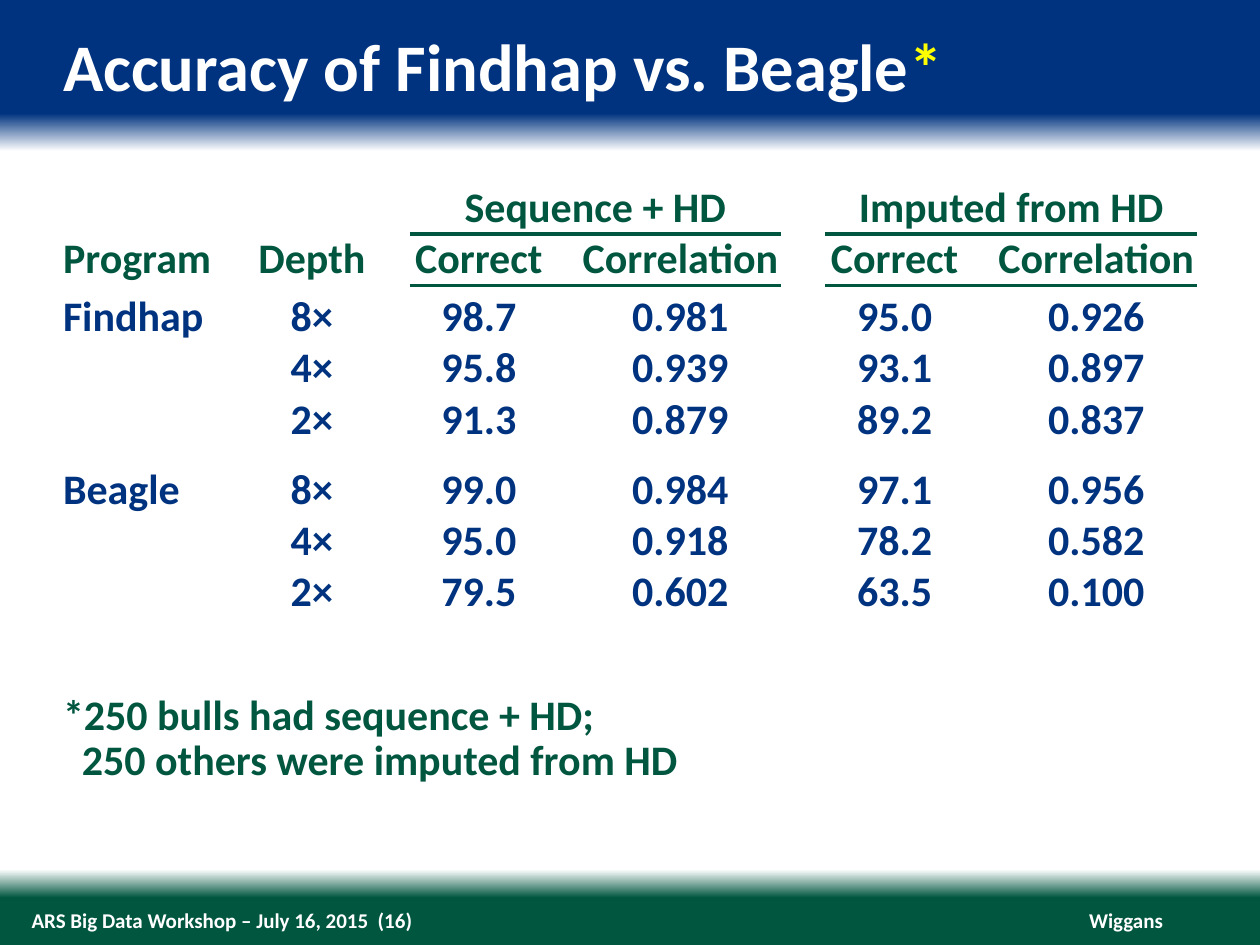
"""Build the slide comparing the accuracy of Findhap and Beagle."""
from lxml.etree import SubElement
from pptx import Presentation
from pptx.dml.color import RGBColor
from pptx.enum.text import MSO_ANCHOR, MSO_AUTO_SIZE, PP_ALIGN
from pptx.oxml import parse_xml
from pptx.oxml.ns import nsdecls, qn
from pptx.util import Pt

COLORS = {"blue": "00337F", "green": "00563F", "white": "FFFFFF", "yellow": "FFFF00"}
BACKGROUND_STOPS = [(0, "blue"), (12, "blue"), (16, "white"),
                    (92, "white"), (95, "green"), (100, "green")]

TITLE = [("Accuracy of Findhap vs. Beagle", "white"), ("*", "yellow")]
FOOTNOTE = ["*250 bulls had sequence + HD;", "250 others were imputed from HD"]
FOOTERS = [
    ("ARS Big Data Workshop – July 16, 2015  (16)", (18, 518.4, 375.84, 14.4), PP_ALIGN.LEFT, True),
    ("Wiggans", (622.08, 518.4, 42.48, 14.4), PP_ALIGN.RIGHT, False),
]
GROUPS = {"Sequence + HD": 2, "Imputed from HD": 6}
HEADINGS = ["Program", "Depth", "Correct", "Correlation", "Correct", "Correlation"]
RESULTS = [
    ["Findhap", "8×", "98.7", "0.981", "95.0", "0.926"],
    ["", "4×", "95.8", "0.939", "93.1", "0.897"],
    ["", "2×", "91.3", "0.879", "89.2", "0.837"],
    ["Beagle", "8×", "99.0", "0.984", "97.1", "0.956"],
    ["", "4×", "95.0", "0.918", "78.2", "0.582"],
    ["", "2×", "79.5", "0.602", "63.5", "0.100"],
]
TEXT_COLUMNS = [0, 1, 2, 4, 6, 8]
COLUMN_WIDTHS = [86.4, 111.6, 79.2, 18, 115.2, 25.2, 79.2, 18, 115.2]
ROW_HEIGHT = 29.3
PROGRAM_GAPS = {2: 3.6, 5: 10.8}
NO_STYLE = "{2D5ABB26-0587-4C30-8999-92F81FD0307C}"
NO_MARGINS = dict.fromkeys(["margin_left", "margin_top", "margin_right", "margin_bottom"], 0)


def apply(target, formats):
    for name, value in formats.items():
        setattr(target, name, value)


def write(paragraph, text, color, size, align=PP_ALIGN.LEFT):
    paragraph.alignment = align
    run = paragraph.add_run()
    run.text = text
    apply(run.font, {"name": "Calibri", "size": Pt(size), "bold": True})
    run.font.color.rgb = RGBColor.from_string(COLORS[color])


def set_frame(frame, wrap=True, anchor=MSO_ANCHOR.TOP):
    apply(frame, {**NO_MARGINS, "word_wrap": wrap, "vertical_anchor": anchor,
                  "auto_size": MSO_AUTO_SIZE.NONE})
    return frame


def add_text_box(slide, box, **formats):
    return set_frame(slide.shapes.add_textbox(*map(Pt, box)).text_frame, **formats)


def paint_background(slide):
    fill = slide.background.fill
    fill.gradient()
    fill.gradient_angle = 270
    stops = slide.element.find(".//" + qn("a:gsLst"))
    stops.clear()
    for position, color in BACKGROUND_STOPS:
        stop = SubElement(stops, qn("a:gs"), pos=str(position * 1000))
        SubElement(stop, qn("a:srgbClr"), val=COLORS[color])


def underline(cell):
    rule = parse_xml(f'<a:lnB {nsdecls("a")} w="{Pt(2.25)}"><a:solidFill>'
                     f'<a:srgbClr val="{COLORS["green"]}"/></a:solidFill></a:lnB>')
    cell._tc.get_or_add_tcPr().insert(0, rule)


def add_results(slide):
    rows = [[""] * 6, HEADINGS, *RESULTS]
    frame = slide.shapes.add_table(len(rows), len(COLUMN_WIDTHS), Pt(36), Pt(104.4),
                                   Pt(sum(COLUMN_WIDTHS)), Pt(ROW_HEIGHT * len(rows)))
    table = frame.table
    apply(table, {"first_row": False, "horz_banding": False})
    table._tbl.tblPr.find(qn("a:tableStyleId")).text = NO_STYLE
    for column, width in zip(table.columns, COLUMN_WIDTHS):
        column.width = Pt(width)
    for index, values in enumerate(rows):
        gap = PROGRAM_GAPS.get(index, 0)
        table.rows[index].height = Pt(ROW_HEIGHT + gap)
        for cell in table.rows[index].cells:
            apply(cell, {**NO_MARGINS, "margin_top": Pt(gap)})
            cell.fill.background()
        for column, value in zip(TEXT_COLUMNS, values):
            if value:
                write(table.cell(index, column).text_frame.paragraphs[0], value,
                      "green" if index == 1 else "blue", 24,
                      PP_ALIGN.CENTER if column else PP_ALIGN.LEFT)
    for group, first in GROUPS.items():
        for index in (0, 1):
            for column in range(first, first + 3):
                underline(table.cell(index, column))
        heading = table.cell(0, first)
        heading.merge(table.cell(0, first + 2))
        write(heading.text_frame.paragraphs[0], group, "green", 24, PP_ALIGN.CENTER)
    table.cell(0, 5).merge(table.cell(1, 5))


def main():
    deck = Presentation()
    apply(deck, {"slide_width": Pt(720), "slide_height": Pt(540)})
    slide = deck.slides.add_slide(deck.slide_layouts[5])
    paint_background(slide)

    for text, box, align, wrap in FOOTERS:
        footer = add_text_box(slide, box, wrap=wrap, anchor=MSO_ANCHOR.MIDDLE)
        write(footer.paragraphs[0], text, "white", 12, align)

    title = slide.shapes.title
    apply(title, {"left": Pt(36), "top": Pt(14.4), "width": Pt(648), "height": Pt(46.08)})
    heading = set_frame(title.text_frame).paragraphs[0]
    for text, color in TITLE:
        write(heading, text, color, 38)

    add_results(slide)

    footnote = add_text_box(slide, (36, 396, 354.24, 52.56), wrap=False)
    for index, text in enumerate(FOOTNOTE):
        line = footnote.add_paragraph() if index else footnote.paragraphs[0]
        line.line_spacing = Pt(26)
        write(line, text, "green", 24)
        if index:
            line._p.get_or_add_pPr().set("marL", str(Pt(10.8)))

    deck.save("out.pptx")


if __name__ == "__main__":
    main()
